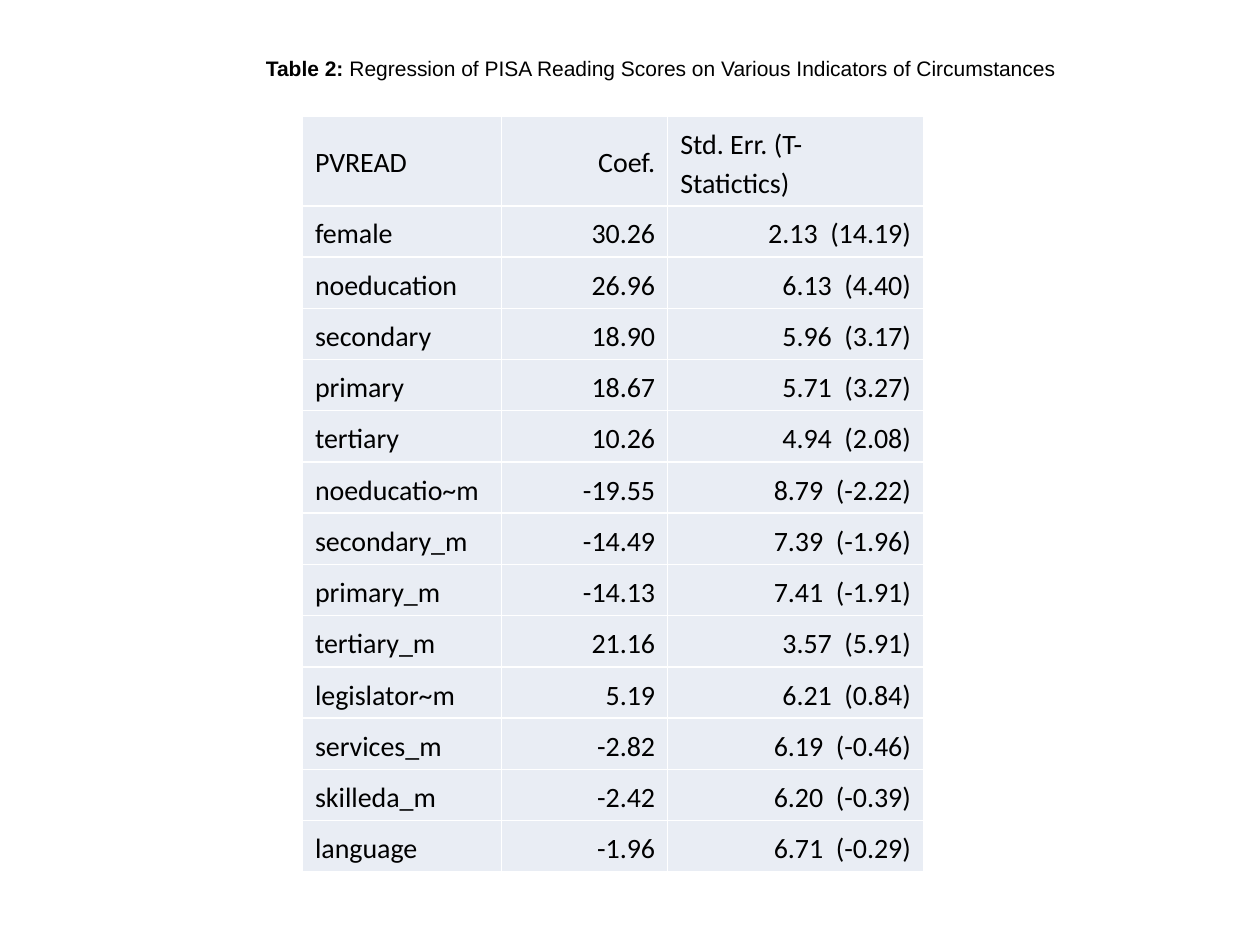
from lxml.etree import SubElement
from pptx import Presentation
from pptx.dml.color import RGBColor
from pptx.enum.text import MSO_ANCHOR, MSO_AUTO_SIZE, PP_ALIGN
from pptx.oxml.ns import qn
from pptx.util import Inches, Pt

BLACK = RGBColor(0x00, 0x00, 0x00)
WHITE = RGBColor(0xFF, 0xFF, 0xFF)
PALE_BLUE = RGBColor(0xE9, 0xED, 0xF4)

SLIDE_W, SLIDE_H = Inches(10), Inches(7.5)
COLUMN_WIDTHS = (1.58, 1.32, 2.03)
ROW_HEIGHT = 0.26  # minimum; rows grow to hold their text

HEADER = ("PVREAD", "Coef.", "Std. Err. (T- Statictics)")
# Variable, coefficient, standard error, t-statistic
REGRESSION = (
    ("female", 30.26, 2.13, 14.19),
    ("noeducation", 26.96, 6.13, 4.40),
    ("secondary", 18.90, 5.96, 3.17),
    ("primary", 18.67, 5.71, 3.27),
    ("tertiary", 10.26, 4.94, 2.08),
    ("noeducatio~m", -19.55, 8.79, -2.22),
    ("secondary_m", -14.49, 7.39, -1.96),
    ("primary_m", -14.13, 7.41, -1.91),
    ("tertiary_m", 21.16, 3.57, 5.91),
    ("legislator~m", 5.19, 6.21, 0.84),
    ("services_m", -2.82, 6.19, -0.46),
    ("skilleda_m", -2.42, 6.20, -0.39),
    ("language", -1.96, 6.71, -0.29),
)


def add_text(paragraph, text, font="Calibri", size=16, bold=False,
             align=PP_ALIGN.LEFT, spacing=None):
    paragraph.alignment = align
    paragraph.line_spacing = spacing
    run = paragraph.add_run()
    run.text = text
    run.font.name = font
    run.font.size = Pt(size)
    run.font.bold = bold
    run.font.color.rgb = BLACK


def add_borders(cell, color, width):
    properties = cell._tc.get_or_add_tcPr()
    for side in ("a:lnL", "a:lnR", "a:lnT", "a:lnB"):
        line = SubElement(properties, qn(side), w=str(Pt(width)))
        fill = SubElement(line, qn("a:solidFill"))
        SubElement(fill, qn("a:srgbClr"), val=str(color))


def place_caption(slide, left, top, width, height):
    caption = slide.shapes.title
    caption.left, caption.top, caption.width, caption.height = left, top, width, height
    frame = caption.text_frame
    frame.word_wrap = False
    frame.auto_size = MSO_AUTO_SIZE.SHAPE_TO_FIT_TEXT
    frame.vertical_anchor = MSO_ANCHOR.MIDDLE
    paragraph = frame.paragraphs[0]
    add_text(paragraph, "Table 2:", font="Arial", size=12, bold=True)
    add_text(paragraph, " Regression of PISA Reading Scores on Various Indicators "
             "of Circumstances", font="Arial", size=12)


def place_regression_table(slide, left, top, width, height):
    rows = [HEADER] + [
        (name, f"{coef:.2f}", f"{error:.2f}  ({t_stat:.2f})")
        for name, coef, error, t_stat in REGRESSION
    ]
    holder = slide.shapes.add_table(len(rows), len(HEADER), left, top, width, height)
    table = holder.table
    table.first_row = table.horz_banding = False
    for column, share in zip(table.columns, COLUMN_WIDTHS):
        column.width = int(width * share / sum(COLUMN_WIDTHS))

    for r, values in enumerate(rows):
        table.rows[r].height = Inches(ROW_HEIGHT)
        for c, value in enumerate(values):
            cell = table.cell(r, c)
            add_borders(cell, WHITE, 1)
            cell.fill.solid()
            cell.fill.fore_color.rgb = PALE_BLUE
            cell.vertical_anchor = MSO_ANCHOR.MIDDLE
            # Numbers and the coefficient heading are right-aligned
            is_right = c == 1 or (c == 2 and r > 0)
            add_text(cell.text_frame.paragraphs[0], value, spacing=1.15,
                     align=PP_ALIGN.RIGHT if is_right else PP_ALIGN.LEFT)
    holder.height = height


def main():
    prs = Presentation()
    prs.slide_width, prs.slide_height = SLIDE_W, SLIDE_H
    slide = prs.slides.add_slide(prs.slide_layouts[5])  # title only

    # Caption above the table
    place_caption(slide, Inches(2.01), Inches(0.29), SLIDE_W, Inches(0.5))
    # Regression results
    place_regression_table(slide, Inches(2.4), Inches(0.92),
                           Inches(sum(COLUMN_WIDTHS)), Inches(5.73))
    prs.save("out.pptx")


if __name__ == "__main__":
    main()
